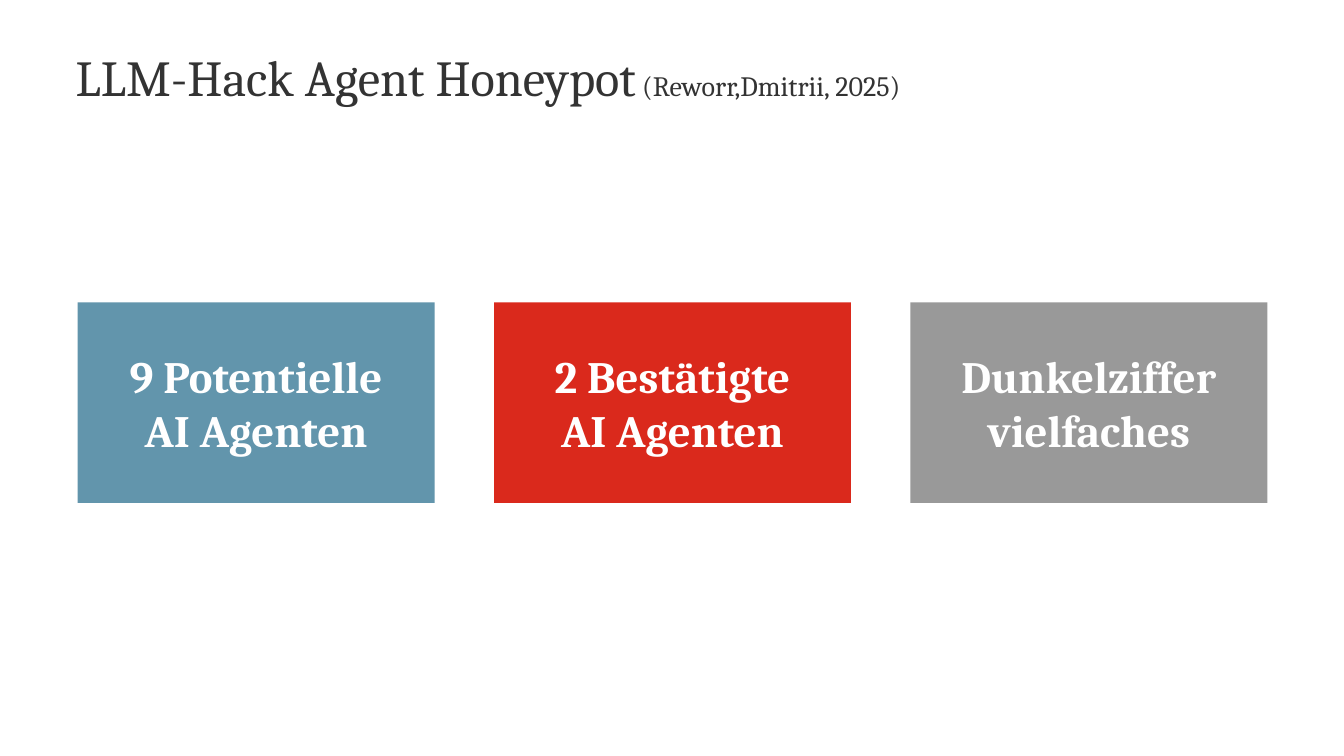
import pptx
import pptx.util
import pptx.dml.color
import pptx.enum.shapes
import pptx.enum.text

Inches = pptx.util.Inches
Pt = pptx.util.Pt
RGB = pptx.dml.color.RGBColor.from_string
PP_ALIGN = pptx.enum.text.PP_ALIGN
MSO_ANCHOR = pptx.enum.text.MSO_ANCHOR

COLORS = {
    "title": "333333",
    "blue": "6295AC",
    "red": "DA291C",
    "gray": "999999",
    "white": "FFFFFF",
}


def style(r, size, color, bold=False):
    r.font.name = "Cambria"
    r.font.size = Pt(size)
    r.font.bold = bold
    r.font.color.rgb = RGB(COLORS[color])


prs = pptx.Presentation()
prs.slide_width = Inches(13.33)
prs.slide_height = Inches(7.5)
s = prs.slides.add_slide(prs.slide_layouts[5])

title = s.shapes.title
title.left, title.top = Inches(0.75), Inches(0.53)
title.width, title.height = Inches(10.24), Inches(0.94)
tf = title.text_frame
tf.margin_left = tf.margin_right = tf.margin_top = tf.margin_bottom = 0
tf.vertical_anchor = MSO_ANCHOR.TOP
tf.auto_size = pptx.enum.text.MSO_AUTO_SIZE.NONE
p = tf.paragraphs[0]
p.text = "LLM-Hack Agent Honeypot"
p.alignment = PP_ALIGN.LEFT
p.line_spacing = 0.9
style(p.runs[0], 36, "title")
r = p.add_run()
r.text = " (Reworr,Dmitrii, 2025)"
style(r, 20, "title")

boxes = [
    ("9 Potentielle\vAI Agenten", "blue"),
    ("2 Bestätigte\vAI Agenten", "red"),
    ("Dunkelziffer vielfaches", "gray"),
]
for i, (text, color) in enumerate(boxes):
    sp = s.shapes.add_shape(
        pptx.enum.shapes.MSO_SHAPE.RECTANGLE,
        Inches(0.77 + i * 4.13), Inches(3), Inches(3.54), Inches(1.99),
    )
    sp.shadow.inherit = False
    sp.fill.solid()
    sp.fill.fore_color.rgb = RGB(COLORS[color])
    sp.line.fill.background()
    tf = sp.text_frame
    tf.word_wrap = True
    tf.vertical_anchor = MSO_ANCHOR.MIDDLE
    p = tf.paragraphs[0]
    p.text = text
    p.alignment = PP_ALIGN.CENTER
    p.space_after = Pt(6)
    for r in p.runs:
        style(r, 32, "white", True)

prs.save("out.pptx")
